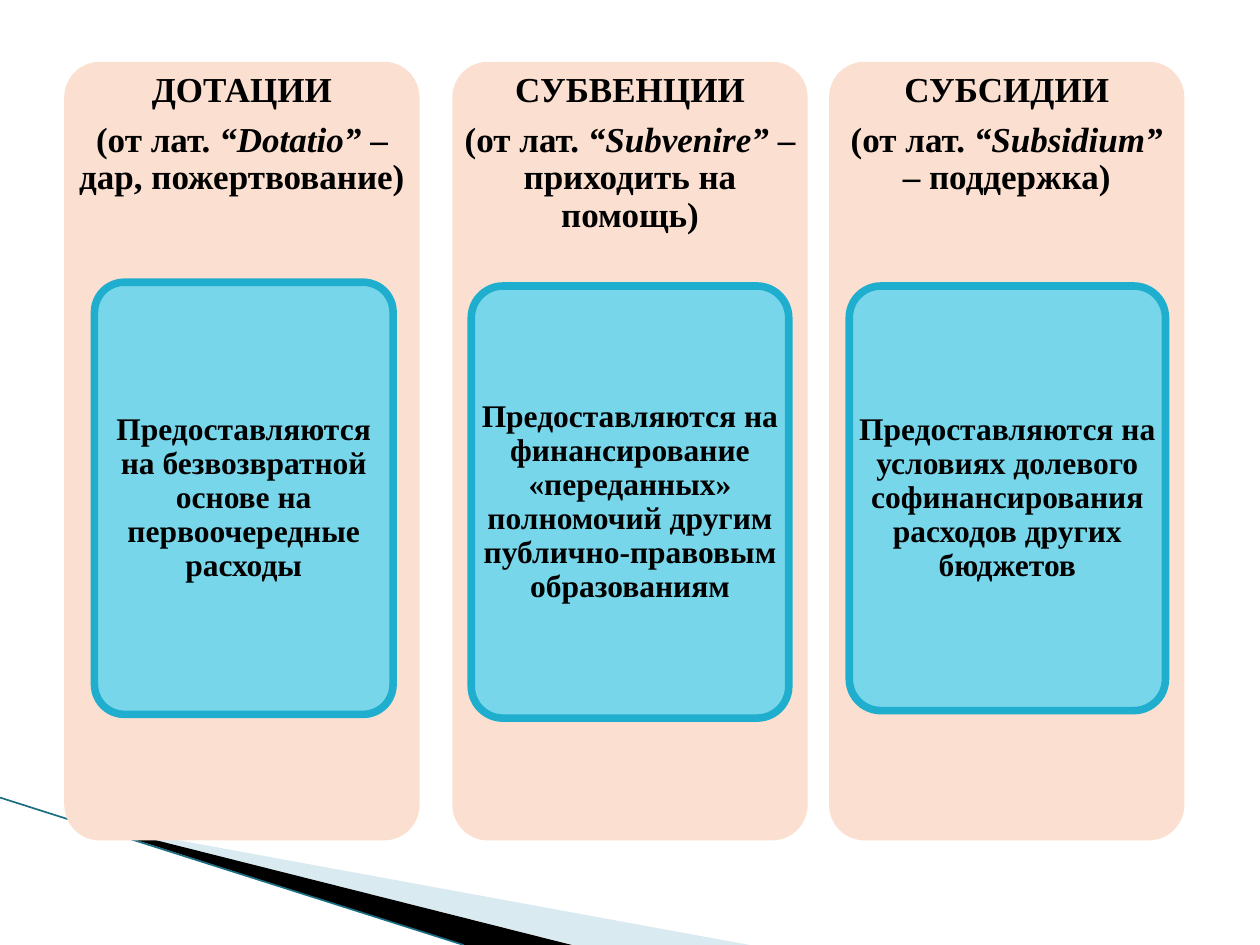
from lxml import etree
from pptx import Presentation
from pptx.dml.color import RGBColor
from pptx.enum.shapes import MSO_CONNECTOR, MSO_SHAPE
from pptx.enum.text import MSO_ANCHOR, PP_ALIGN
from pptx.oxml.ns import qn
from pptx.util import Inches, Pt

PEACH = RGBColor(0xFB, 0xE0, 0xD1)
AQUA = RGBColor(0x78, 0xD6, 0xEA)
TEAL = RGBColor(0x1F, 0xAE, 0xCD)
PALE_BLUE = RGBColor(0xA0, 0xCB, 0xDC)
DARK_TEAL = RGBColor(0x1A, 0x6E, 0x82)
BLACK = RGBColor(0, 0, 0)
FONT = "Times New Roman"

PANEL_TOP, PANEL_WIDTH, PANEL_HEIGHT, HEADER_HEIGHT = 0.49, 2.82, 6.18, 1.85

TRANSFERS = [
    (0.51, "ДОТАЦИИ", "“Dotatio”", "– дар, пожертвование)",
     (0.75, 2.24, 2.37, 3.43),
     "Предоставляются на безвозвратной основе на первоочередные расходы"),
    (3.59, "СУБВЕНЦИИ", "“Subvenire”", "– приходить на помощь)",
     (3.74, 2.27, 2.52, 3.43),
     "Предоставляются на финансирование «переданных» полномочий другим "
     "публично-правовым образованиям"),
    (6.58, "СУБСИДИИ", "“Subsidium”", "– поддержка)",
     (6.74, 2.27, 2.51, 3.37),
     "Предоставляются на условиях долевого софинансирования расходов "
     "других бюджетов"),
]


def inches(box):
    return [Inches(length) for length in box]


def set_insets(frame, inset):
    frame.word_wrap = True
    frame.margin_left = frame.margin_right = Inches(inset)
    frame.margin_top = frame.margin_bottom = Inches(inset)


def format_paragraph(paragraph, size):
    paragraph.alignment = PP_ALIGN.CENTER
    paragraph.line_spacing = 0.9
    font = paragraph.font
    font.name, font.size, font.bold = FONT, Pt(size), True
    font.color.rgb = BLACK


def add_rounded(slide, box, fill):
    card = slide.shapes.add_shape(MSO_SHAPE.ROUNDED_RECTANGLE, *inches(box))
    card.adjustments[0] = 0.1
    card.shadow.inherit = False
    card.fill.solid()
    card.fill.fore_color.rgb = fill
    card.line.fill.background()
    return card


def add_header(slide, box, name, latin, meaning):
    frame = slide.shapes.add_textbox(*inches(box)).text_frame
    set_insets(frame, 0.08)
    heading = frame.paragraphs[0]
    heading.text = name
    heading.space_after = Pt(7)
    origin = frame.add_paragraph()
    for words, italic in (("(от лат. ", False), (latin + " ", True), (meaning, False)):
        run = origin.add_run()
        run.text = words
        run.font.italic = italic
    for paragraph in (heading, origin):
        format_paragraph(paragraph, 20)


def add_terms(slide, box, terms):
    card = add_rounded(slide, box, AQUA)
    card.line.color.rgb = TEAL
    card.line.width = Pt(4.33)
    frame = card.text_frame
    set_insets(frame, 0)
    frame.vertical_anchor = MSO_ANCHOR.MIDDLE
    frame.paragraphs[0].text = terms
    format_paragraph(frame.paragraphs[0], 18)


def add_transfer(slide, left, name, latin, meaning, terms_box, terms):
    add_rounded(slide, (left, PANEL_TOP, PANEL_WIDTH, PANEL_HEIGHT), PEACH)
    add_terms(slide, terms_box, terms)
    add_header(slide, (left, PANEL_TOP, PANEL_WIDTH, HEADER_HEIGHT),
               name, latin, meaning)


def add_wedge(slide, points, fill):
    start, *rest = [tuple(inches(point)) for point in points]
    builder = slide.shapes.build_freeform(*start)
    builder.add_line_segments(rest, close=True)
    wedge = builder.convert_to_shape()
    wedge.shadow.inherit = False
    wedge.fill.solid()
    wedge.fill.fore_color.rgb = fill
    wedge.line.fill.background()
    return wedge


def add_corner(slide, left, top, bottom):
    pale = add_wedge(slide, [(left + 0.55, top + 0.18), (left + 5.95, bottom),
                             (left + 4.56, bottom)], PALE_BLUE)
    tint = pale.fill._xPr.find(".//" + qn("a:srgbClr"))
    etree.SubElement(tint, qn("a:alpha")).set("val", "40000")
    add_wedge(slide, [(left + 0.53, top + 0.16), (left + 4.54, bottom),
                      (left + 3.68, bottom)], BLACK)
    edge = slide.shapes.add_connector(
        MSO_CONNECTOR.STRAIGHT, *inches((left, top, left + 3.68, bottom)))
    edge.line.color.rgb = DARK_TEAL
    edge.line.width = Pt(0.95)
    etree.SubElement(edge._element.spPr, qn("a:effectLst"))


def main():
    deck = Presentation()
    deck.slide_width, deck.slide_height = Inches(10), Inches(7.5)
    slide = deck.slides.add_slide(deck.slide_layouts[6])
    add_corner(slide, 0, 6.33, 7.5)
    for transfer in TRANSFERS:
        add_transfer(slide, *transfer)
    deck.save("out.pptx")


if __name__ == "__main__":
    main()
